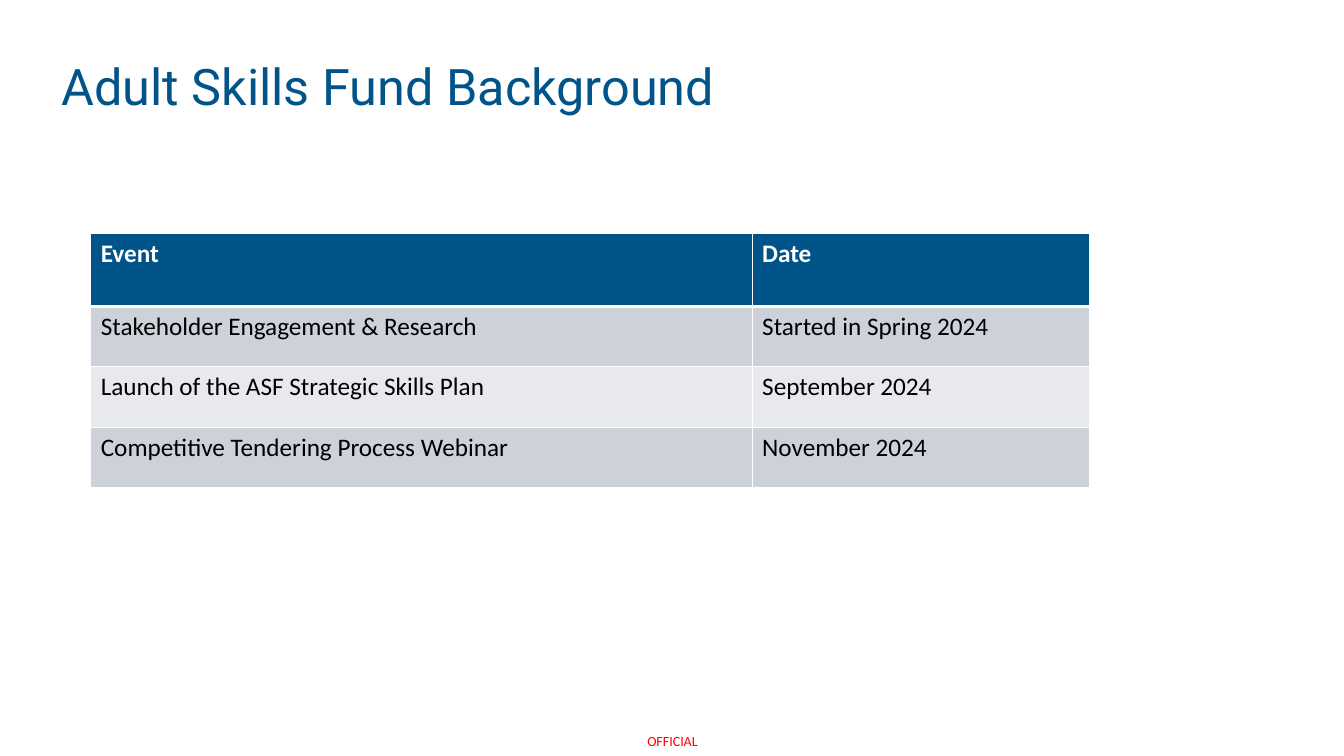
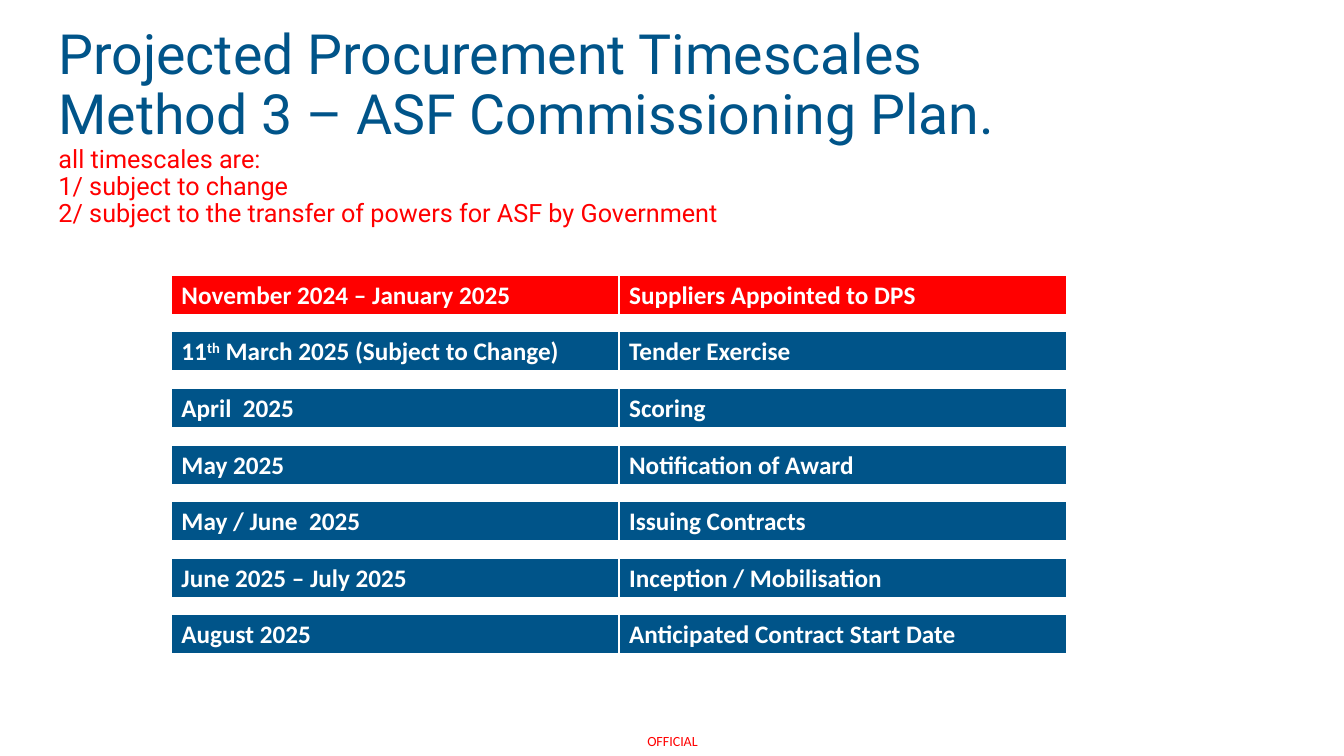
from copy import deepcopy

from lxml.etree import SubElement
from pptx import Presentation
from pptx.dml.color import RGBColor
from pptx.enum.text import MSO_ANCHOR, MSO_AUTO_SIZE, PP_ALIGN
from pptx.oxml.ns import qn
from pptx.util import Inches, Pt

BLUE, RED, WHITE, BLACK = "005489", "FF0000", "FFFFFF", "000000"
BANDS = ("CCD1DA", "E7E9ED")
BODY_FONT, TITLE_FONT = "Calibri", "Roboto"
TITLE_ONLY = 5

EVENTS = [
    ("Event", "Date"),
    ("Stakeholder Engagement & Research", "Started in Spring 2024"),
    ("Launch of the ASF Strategic Skills Plan", "September 2024"),
    ("Competitive Tendering Process Webinar", "November 2024"),
]
# A tuple holds text pieces that alternate between normal and superscript.
MILESTONES = [
    ("November 2024 – January 2025", "Suppliers Appointed to DPS"),
    (("11", "th", " March 2025 (Subject to Change)"), "Tender Exercise"),
    ("April  2025", "Scoring"),
    ("May 2025", "Notification of Award"),
    ("May / June  2025", "Issuing Contracts"),
    ("June 2025 – July 2025", "Inception / Mobilisation"),
    ("August 2025", "Anticipated Contract Start Date"),
]


def rgb(color):
    return RGBColor.from_string(color)


def add_run(paragraph, text, size, color, font=BODY_FONT, bold=False):
    run = paragraph.add_run()
    run.text = text
    run.font.size = Pt(size)
    run.font.name = font
    run.font.bold = bold
    run.font.color.rgb = rgb(color)
    return run


def add_title(slide, box, lines):
    """Fill the title with (text, size, color) lines parted by line breaks."""
    title = slide.shapes.title
    title.left, title.top, title.width, title.height = map(Inches, box)
    frame = title.text_frame
    frame.word_wrap = True
    frame.auto_size = MSO_AUTO_SIZE.NONE
    frame.vertical_anchor = MSO_ANCHOR.MIDDLE
    paragraph = frame.paragraphs[0]
    paragraph.alignment = PP_ALIGN.LEFT
    paragraph.line_spacing = 0.9
    for index, (text, size, color) in enumerate(lines):
        if index:
            paragraph.add_line_break()
            paragraph._p[-1].append(deepcopy(run._r.rPr))
        run = add_run(paragraph, text, size, color, TITLE_FONT)


def add_marking(slide):
    marking = slide.shapes.add_textbox(
        Inches(6.27), Inches(7.21), Inches(0.8), Inches(0.29))
    frame = marking.text_frame
    frame.word_wrap = True
    frame.vertical_anchor = MSO_ANCHOR.MIDDLE
    frame.margin_left = frame.margin_right = 0
    frame.margin_top = frame.margin_bottom = 0
    paragraph = frame.paragraphs[0]
    paragraph.alignment = PP_ALIGN.CENTER
    add_run(paragraph, "OFFICIAL", 10, RED)


def set_borders(cell, widths):
    """Draw white borders; widths maps L, R, T, B, in that order, to points."""
    properties = cell._tc.get_or_add_tcPr()
    for index, (side, width) in enumerate(widths.items()):
        line = SubElement(properties, qn(f"a:ln{side}"), w=str(Pt(width)))
        fill = SubElement(line, qn("a:solidFill"))
        SubElement(fill, qn("a:srgbClr"), val=WHITE)
        properties.insert(index, line)


def fill_cell(cell, content, fill, color, bold):
    cell.fill.solid()
    cell.fill.fore_color.rgb = rgb(fill)
    pieces = (content,) if isinstance(content, str) else content
    paragraph = cell.text_frame.paragraphs[0]
    for index, text in enumerate(pieces):
        run = add_run(paragraph, text, 18, color, bold=bold)
        if index % 2:
            run._r.get_or_add_rPr().set("baseline", "30000")


def add_grid(slide, left, top, columns, heights, rows, header_fill):
    """Add a table with a bold header row and banded rows below it."""
    table = slide.shapes.add_table(
        len(rows), len(columns), Inches(left), Inches(top),
        Inches(sum(columns)), Inches(sum(heights))).table
    table.first_row = table.horz_banding = False
    for column, width in zip(table.columns, columns):
        column.width = Inches(width)
    for index, (row, height, contents) in enumerate(
            zip(table.rows, heights, rows)):
        row.height = Inches(height)
        header = index == 0
        fill = header_fill if header else BANDS[(index - 1) % 2]
        for cell, content in zip(row.cells, contents):
            fill_cell(cell, content, fill, WHITE if header else BLACK, header)
            set_borders(cell, {"L": 1, "R": 1, "T": 3 if index == 1 else 1,
                               "B": 3 if header else 1})


def add_slide(presentation, title_box, title_lines):
    slide = presentation.slides.add_slide(
        presentation.slide_layouts[TITLE_ONLY])
    add_marking(slide)
    add_title(slide, title_box, title_lines)
    return slide


def build_background(presentation):
    slide = add_slide(presentation, (0.51, 0.5, 11.5, 0.77),
                      [("Adult Skills Fund Background", 36, BLUE)])
    add_grid(slide, 0.9, 2.32, (6.56, 3.35), (0.72, 0.6, 0.6, 0.6),
             EVENTS, BLUE)


def build_timescales(presentation):
    slide = add_slide(presentation, (0.48, 0.67, 11.5, 1.19), [
        ("Projected Procurement Timescales", 39.6, BLUE),
        ("Method 3 – ASF Commissioning Plan.", 39.6, BLUE),
        ("all timescales are:", 18, RED),
        ("1/ subject to change", 18, RED),
        ("2/ subject to the transfer of powers for ASF by Government", 18, RED),
    ])
    first_top, last_top = 2.73, 6.1
    pitch = (last_top - first_top) / (len(MILESTONES) - 1)
    for index, milestone in enumerate(MILESTONES):
        add_grid(slide, 1.7, first_top + index * pitch, (4.44, 4.44), (0.38,),
                 [milestone], BLUE if index else RED)


def main():
    presentation = Presentation()
    presentation.slide_width = Inches(13.33)
    presentation.slide_height = Inches(7.5)
    build_background(presentation)
    build_timescales(presentation)
    presentation.save("out.pptx")


if __name__ == "__main__":
    main()
